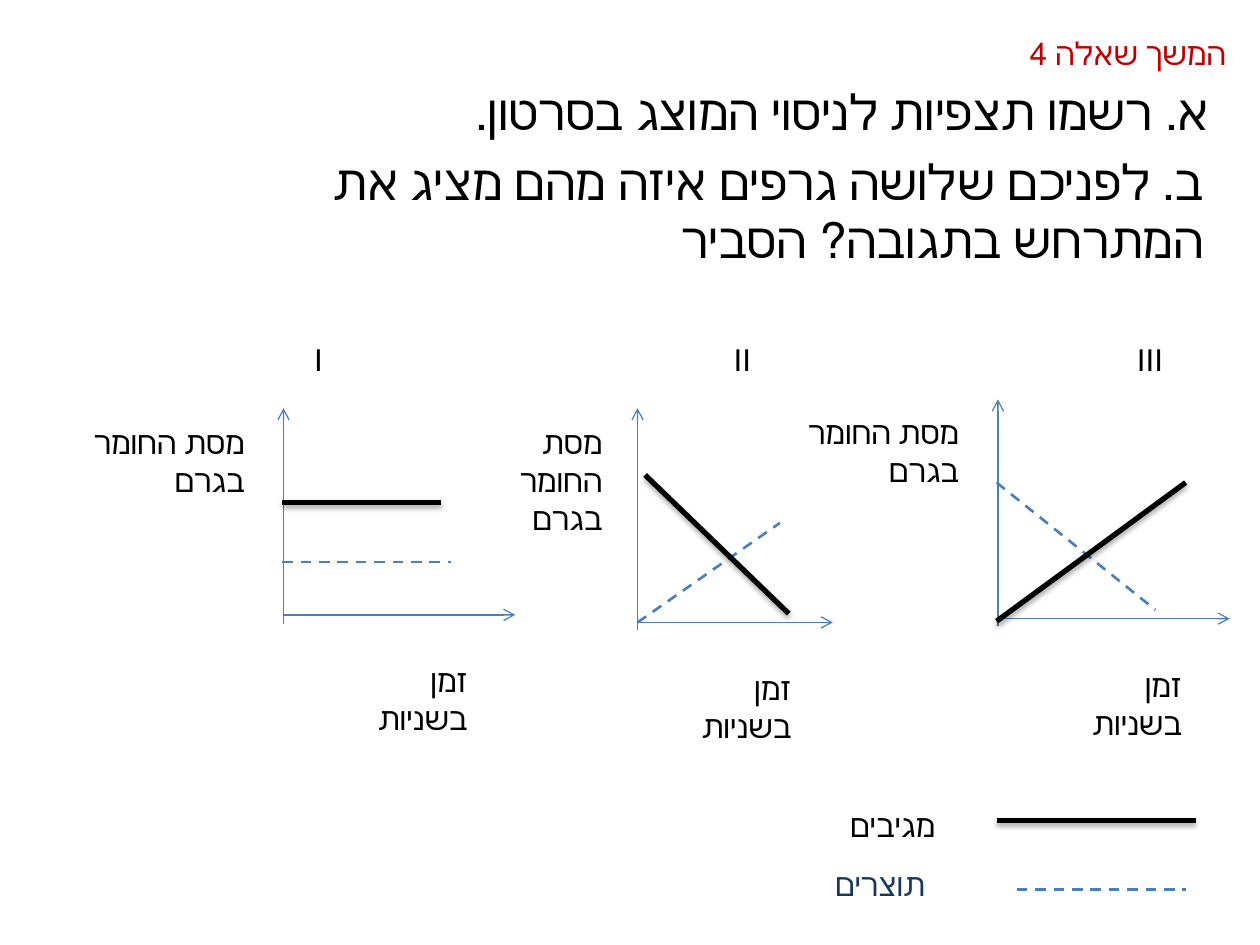
from lxml import etree
from pptx import Presentation
from pptx.dml.color import RGBColor
from pptx.enum.dml import MSO_LINE
from pptx.enum.shapes import MSO_CONNECTOR
from pptx.enum.text import MSO_ANCHOR, PP_ALIGN
from pptx.oxml.ns import qn
from pptx.util import Inches, Pt

STRAIGHT = MSO_CONNECTOR.STRAIGHT
DASH = MSO_LINE.DASH
RIGHT = PP_ALIGN.RIGHT
TOP, MIDDLE = MSO_ANCHOR.TOP, MSO_ANCHOR.MIDDLE

COLORS = {"ink": "000000", "red": "C00000", "blue": "4B7EBC", "navy": "17375E"}
LINES = {
    "axis": {"color": "blue", "format": {"width": Pt(0.75)}},
    "products": {"color": "blue", "format": {"width": Pt(1.5), "dash_style": DASH}},
    "reactants": {"color": "ink", "format": {"width": Pt(3)}},
}
COLUMNS, ROWS = 100, 75

MASS_LABEL = "מסת החומר בגרם"
TIME_LABEL = "זמן בשניות"

# Lines are (start column, start row, end column, end row);
# labels are (left column, top row, width, height).
GRAPHS = [
    {"numeral": "III", "numeral_right": 93.3,
     "y_axis": (79.2, 49.7, 79.2, 31.7), "x_axis": (79.2, 49.1, 97.6, 49.1),
     "products": (79.1, 38.3, 91.7, 48.4), "reactants": (79.1, 49.3, 94.1, 38.3),
     "mass": (62.2, 32.3, 14.9, 6), "time": (83.5, 52.4, 11.3, 6)},
    {"numeral": "II", "numeral_right": 60.6,
     "y_axis": (50.6, 50, 50.6, 32.4), "x_axis": (50.6, 49.4, 66.1, 49.4),
     "products": (50.6, 49.4, 61.9, 41.5), "reactants": (51.2, 37.7, 62.6, 48.7),
     "mass": (36.2, 33.1, 12.6, 5.8), "time": (54.2, 52.6, 9.6, 5.8)},
    {"numeral": "I", "numeral_right": 26.6,
     "y_axis": (22.5, 49.5, 22.5, 32.4), "x_axis": (22.5, 48.8, 40.9, 48.8),
     "products": (22.4, 44.6, 35.8, 44.6), "reactants": (22.4, 39.9, 35, 39.9),
     "mass": (5.5, 33.1, 14.9, 5.7), "time": (26.8, 52, 11.3, 5.7)},
]


class SlideBuilder:
    def __init__(self, presentation):
        self.slide = presentation.slides.add_slide(presentation.slide_layouts[6])
        self.column = presentation.slide_width / COLUMNS
        self.row = presentation.slide_height / ROWS

    def place(self, across, down, *rest):
        """Turn alternating columns and rows into lengths."""
        return [round(value * (self.row if index % 2 else self.column))
                for index, value in enumerate((across, down, *rest))]

    def text(self, words, box, size=18, color="ink", font="Arial", anchor=TOP, parent=None):
        shapes = (parent or self.slide).shapes
        frame = shapes.add_textbox(*self.place(*box)).text_frame
        frame.word_wrap = True
        frame.vertical_anchor = anchor
        paragraph = frame.paragraphs[0]
        paragraph.alignment = RIGHT
        paragraph._p.get_or_add_pPr().set("rtl", "1")
        run = paragraph.add_run()
        run.text = words
        for name, value in {"size": Pt(size), "name": font}.items():
            setattr(run.font, name, value)
        run.font.color.rgb = RGBColor.from_string(COLORS[color])

    def line(self, kind, ends, parent=None):
        shapes = (parent or self.slide).shapes
        connector = shapes.add_connector(STRAIGHT, *self.place(*ends))
        style = LINES[kind]
        connector.line.color.rgb = RGBColor.from_string(COLORS[style["color"]])
        for name, value in style["format"].items():
            setattr(connector.line, name, value)
        properties = connector._element.spPr
        effects = etree.SubElement(properties, qn("a:effectLst"))
        if kind == "axis":
            etree.SubElement(properties.find(qn("a:ln")), qn("a:tailEnd"), type="arrow")
        if kind == "reactants":
            self.soft_shadow(effects)

    def soft_shadow(self, effects):
        shadow = etree.SubElement(effects, qn("a:outerShdw"), blurRad=str(Pt(3.1)),
                                  dist=str(Pt(1.8)), dir="5400000", rotWithShape="0")
        color = etree.SubElement(shadow, qn("a:srgbClr"), val=COLORS["ink"])
        etree.SubElement(color, qn("a:alpha"), val="35000")

    def graph(self, graph):
        group = self.slide.shapes.add_group_shape()
        for axis in ("y_axis", "x_axis"):
            self.line("axis", graph[axis], group)
        for series in ("products", "reactants"):
            self.line(series, graph[series], group)
        self.text(MASS_LABEL, graph["mass"], parent=group)
        self.text(TIME_LABEL, graph["time"], parent=group)
        self.text(graph["numeral"], (graph["numeral_right"] - 8, 26.5, 8, 4))

    def legend_entry(self, kind, words, ends, box, color):
        self.line(kind, ends)
        self.text(words, box, color=color)


def main():
    presentation = Presentation()
    presentation.slide_width, presentation.slide_height = Inches(10), Inches(7.5)
    builder = SlideBuilder(presentation)
    builder.text("המשך שאלה 4", (65, 0, 33.3, 8.4), color="red", font="Calibri", anchor=MIDDLE)
    builder.text("א. רשמו תצפיות לניסוי המוצג בסרטון.", (14.6, 6, 82.3, 5.7), size=28)
    builder.text("ב. לפניכם שלושה גרפים איזה מהם מציג את המתרחש בתגובה? הסביר",
                 (17.7, 11.5, 78.8, 13.5), size=28)
    for graph in GRAPHS:
        builder.graph(graph)
    builder.legend_entry("reactants", "מגיבים", (79.1, 65.1, 94.9, 65.1),
                         (65, 63.5, 10.2, 4), "ink")
    builder.legend_entry("products", "תוצרים", (80.7, 70.6, 94.1, 70.6),
                         (61, 68.2, 13.4, 4), "navy")
    presentation.save("out.pptx")


if __name__ == "__main__":
    main()
